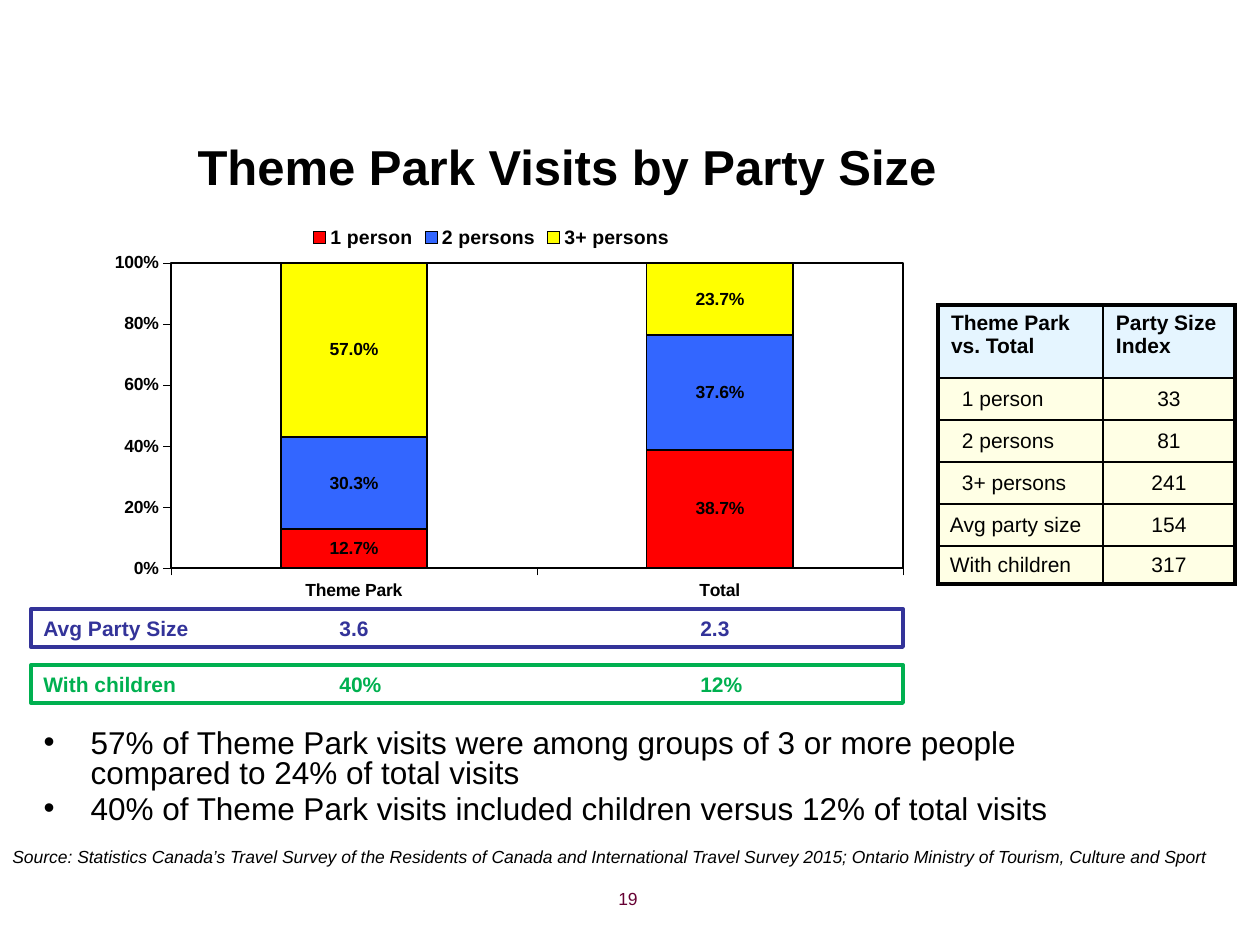
import pptx
import pptx.chart.data
import pptx.dml.color
import pptx.enum.chart
import pptx.enum.shapes
import pptx.enum.text
import pptx.oxml
import pptx.oxml.ns
import pptx.util

RGB = pptx.dml.color.RGBColor
BLACK = RGB(0, 0, 0)
RED = RGB(0xFF, 0, 0)
BLUE = RGB(0x33, 0x66, 0xFF)
YELLOW = RGB(0xFF, 0xFF, 0)
NAVY = RGB(0x33, 0x33, 0x99)
GREEN = RGB(0, 0xB0, 0x50)
WINE = RGB(0x66, 0, 0x33)
SKY = RGB(0xCC, 0xEC, 0xFF)
CREAM = RGB(0xFF, 0xFF, 0xCC)
ALIGN = pptx.enum.text.PP_ALIGN
ANCHOR = pptx.enum.text.MSO_ANCHOR
Pt = pptx.util.Pt
qn = pptx.oxml.ns.qn
SCALE = 914400 / 126


def px(*vals):
    return [round(val * SCALE) for val in vals]


def node(text):
    tag, rest = text.split(":", 1)
    space = pptx.oxml.ns.nsdecls("a", "c")
    head, tail = text[1:].split(" ", 1) if " " in text.split(">")[0] else text[1:].split(">", 1)
    gap = " " if " " in text.split(">")[0] else ">"
    return pptx.oxml.parse_xml(f"<{head} {space}{gap}{tail}")


def assign(item, form):
    for key, val in form.items():
        setattr(item, key, val)


def place(parent, spot, kind, frame):
    for old in parent.findall(qn("c:layout")):
        parent.remove(old)
    parts = f'<c:layoutTarget val="{kind}"/>' if kind else ""
    parts += '<c:xMode val="edge"/><c:yMode val="edge"/>'
    parts += "".join(f'<c:{key} val="{val}"/>' for key, val in frame.items())
    parent.insert(spot, node(f"<c:layout><c:manualLayout>{parts}</c:manualLayout></c:layout>"))


class Deck:
    def __init__(self):
        self.file = pptx.Presentation()
        self.file.slide_width, self.file.slide_height = px(1260, 945)
        self.slide = self.file.slides.add_slide(self.file.slide_layouts[1])
        self.shapes = self.slide.shapes

    def style(self, font, size, color=BLACK, **form):
        assign(font, {"name": "Arial", "size": Pt(size), **form})
        font.color.rgb = color

    def move(self, shape, box):
        assign(shape, dict(zip(("left", "top", "width", "height"), px(*box))))

    def title(self, text, box):
        shape = self.shapes.title
        self.move(shape, box)
        shape.text_frame.text = text
        para = shape.text_frame.paragraphs[0]
        para.alignment = ALIGN.CENTER
        self.style(para.runs[0].font, 28, bold=True)

    def body(self, lines, box):
        shape = self.slide.placeholders[1]
        self.move(shape, box)
        frame = shape.text_frame
        frame.text = "\n".join(lines)
        frame.auto_size = pptx.enum.text.MSO_AUTO_SIZE.NONE
        for row, para in enumerate(frame.paragraphs):
            props = para._p.get_or_add_pPr()
            left, = px(47)
            props.set("marL", str(left))
            props.set("indent", str(-left))
            props.append(node('<a:buChar char="•"/>'))
            assign(para, {"line_spacing": 0.8, "space_before": Pt(3 if row else 0)})
            self.style(para.runs[0].font, 18)

    def note(self, text, box, color=BLACK, align=ALIGN.LEFT, **form):
        frame = self.shapes.add_textbox(*px(*box)).text_frame
        frame.word_wrap = True
        frame.text = text
        para = frame.paragraphs[0]
        para.alignment = align
        self.style(para.runs[0].font, 10, color, **form)

    def strip(self, words, box, color, stops):
        shape = self.shapes.add_shape(pptx.enum.shapes.MSO_SHAPE.RECTANGLE, *px(*box))
        shape.shadow.inherit = False
        shape.fill.background()
        shape.line.color.rgb = color
        shape.line.width = Pt(2.25)
        frame = shape.text_frame
        frame.text = "\t".join(words)
        frame.vertical_anchor = ANCHOR.MIDDLE
        para = frame.paragraphs[0]
        para.alignment = ALIGN.LEFT
        tabs = "".join(f'<a:tab pos="{pos}" algn="l"/>' for pos in px(*stops))
        para._p.get_or_add_pPr().append(node(f"<a:tabLst>{tabs}</a:tabLst>"))
        self.style(para.runs[0].font, 12, color, bold=True)

    def chart(self, names, rows, box):
        data = pptx.chart.data.CategoryChartData(number_format="0.0%")
        data.categories = names
        for name, _, vals in rows:
            data.add_series(name, vals)
        enum = pptx.enum.chart
        kind = enum.XL_CHART_TYPE.COLUMN_STACKED_100
        chart = self.shapes.add_chart(kind, *px(*box), data).chart
        assign(chart, {"has_title": False, "has_legend": True})
        self.style(chart.font, 10, bold=True)
        legend = chart.legend
        assign(legend, {"position": enum.XL_LEGEND_POSITION.TOP, "include_in_layout": False})
        self.style(legend.font, 11.1, bold=True)
        place(legend._element, 1, None, {"x": 0.27, "y": 0.03})
        for axis in (chart.category_axis, chart.value_axis):
            assign(axis, {"has_major_gridlines": False,
                          "major_tick_mark": enum.XL_TICK_MARK.OUTSIDE})
            axis.format.line.color.rgb = BLACK
            axis.format.line.width = Pt(0.25)
            self.style(axis.tick_labels.font, 10, bold=True)
        chart.value_axis.major_unit = 0.2
        assign(chart.value_axis.tick_labels,
               {"number_format": "0%", "number_format_is_linked": False})
        plot = chart.plots[0]
        assign(plot, {"gap_width": 150, "overlap": 100, "vary_by_categories": False})
        for part, (_, color, _) in zip(plot.series, rows):
            part.format.fill.solid()
            part.format.fill.fore_color.rgb = color
            part.format.line.color.rgb = BLACK
            part.format.line.width = Pt(1)
            labels = part.data_labels
            assign(labels, {"show_value": True, "number_format": "0.0%",
                            "number_format_is_linked": False})
            self.style(labels.font, 10, bold=True)
        area = plot._element.getparent()
        place(area, 0, "inner", {"x": 0.105, "y": 0.117, "w": 0.884, "h": 0.637})
        area.append(node('<c:spPr><a:noFill/><a:ln w="12700"><a:solidFill>'
                         f'<a:srgbClr val="{BLACK}"/></a:solidFill></a:ln></c:spPr>'))

    def edge(self, cell, sides):
        props = cell._tc.get_or_add_tcPr()
        for spot, (side, thick) in enumerate(sides.items()):
            width = Pt(2.25 if thick else 1)
            props.insert(spot, node(f'<a:ln{side} w="{width}"><a:solidFill>'
                                    f'<a:srgbClr val="{BLACK}"/></a:solidFill></a:ln{side}>'))

    def table(self, rows, spot, wide, high):
        box = px(*spot, sum(wide), sum(high))
        grid = self.shapes.add_table(len(rows), len(wide), *box).table
        assign(grid, {"first_row": False, "horz_banding": False})
        for col, size in zip(grid.columns, px(*wide)):
            col.width = size
        for row, size in zip(grid.rows, px(*high)):
            row.height = size
        for down, (inset, *words) in enumerate(rows):
            head = down == 0
            for across, word in enumerate(words):
                cell = grid.cell(down, across)
                cell.text = word
                pads = (13, 6, 13, 6) if head else (0 if across else inset, 0, 0, 0)
                keys = ("margin_left", "margin_top", "margin_right", "margin_bottom")
                assign(cell, dict(zip(keys, px(*pads))))
                cell.vertical_anchor = ANCHOR.TOP if head else ANCHOR.MIDDLE
                para = cell.text_frame.paragraphs[0]
                para.alignment = ALIGN.CENTER if across and not head else ALIGN.LEFT
                self.style(para.runs[0].font, 12, bold=head)
                cell.fill.solid()
                cell.fill.fore_color.rgb = SKY if head else CREAM
                tint = next(cell._tc.tcPr.iter(qn("a:srgbClr")))
                tint.append(node('<a:alpha val="50000"/>'))
                self.edge(cell, {"L": across == 0, "R": across == len(wide) - 1,
                                 "T": head, "B": down == len(rows) - 1})


def main():
    deck = Deck()
    deck.title("Theme Park Visits by Party Size", (0, 122, 1134, 87))
    deck.body(["57% of Theme Park visits were among groups of 3 or more people "
               "compared to 24% of total visits",
               "40% of Theme Park visits included children versus 12% of total visits"],
              (31, 724, 1132, 95))
    deck.chart(["Theme Park", "Total"],
               [("1 person", RED, (0.127, 0.387)),
                ("2 persons", BLUE, (0.303, 0.376)),
                ("3+ persons", YELLOW, (0.57, 0.237))], (84, 207, 828, 479))
    deck.table([(13, "Theme Park vs. Total", "Party Size Index"),
                (24, "1 person", "33"), (24, "2 persons", "81"),
                (24, "3+ persons", "241"), (12, "Avg party size", "154"),
                (12, "With children", "317")],
               (938, 305), (165, 132), (73, 42, 42, 42, 42, 38))
    deck.note("19", (357, 882, 293, 44), WINE, ALIGN.RIGHT)
    deck.note("Source: Statistics Canada’s Travel Survey of the Residents of Canada and "
              "International Travel Survey 2015; Ontario Ministry of Tourism, Culture and Sport",
              (0, 840, 1235, 34), italic=True)
    strips = [(("Avg Party Size", "3.6", "2.3"), NAVY),
              (("With children", "40%", "12%"), GREEN)]
    for step, (words, color) in enumerate(strips):
        deck.strip(words, (31, 609 + 56 * step, 872, 38), color, (296, 657))
    deck.file.save("out.pptx")


if __name__ == "__main__":
    main()
